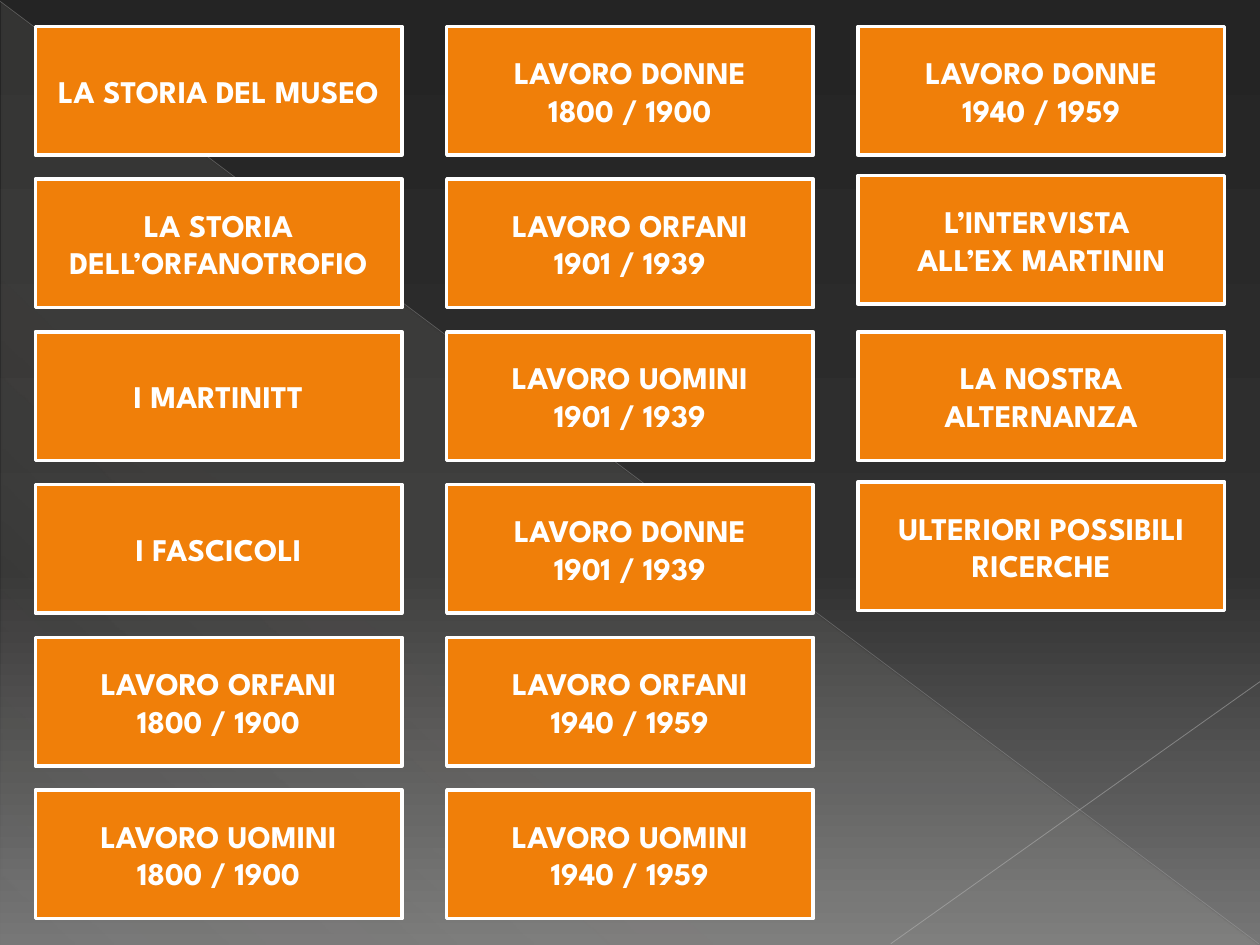
from lxml import etree
from pptx import Presentation
from pptx.dml.color import RGBColor
from pptx.enum.shapes import MSO_CONNECTOR, MSO_SHAPE
from pptx.enum.text import MSO_ANCHOR, PP_ALIGN
from pptx.oxml.ns import qn
from pptx.util import Inches, Pt

RECT, TRIANGLE = MSO_SHAPE.RECTANGLE, MSO_SHAPE.RIGHT_TRIANGLE
STRAIGHT = MSO_CONNECTOR.STRAIGHT
MIDDLE, CENTER = MSO_ANCHOR.MIDDLE, PP_ALIGN.CENTER

# Content: one list per column; \n starts a paragraph, \v breaks a line
COLUMNS = [
    ["LA STORIA DEL MUSEO", "LA STORIA DELL’ORFANOTROFIO", "I MARTINITT",
     "I FASCICOLI", "LAVORO ORFANI\n1800 / 1900", "LAVORO UOMINI\n1800 / 1900"],
    ["LAVORO DONNE\n1800 / 1900", "LAVORO ORFANI\n1901 / 1939",
     "LAVORO UOMINI\n1901 / 1939", "LAVORO DONNE\n1901 / 1939",
     "LAVORO ORFANI\n1940 / 1959", "LAVORO UOMINI\n1940 / 1959"],
    ["LAVORO DONNE\n1940 / 1959", "L’INTERVISTA \vALL’EX MARTININ",
     "LA NOSTRA ALTERNANZA", "ULTERIORI POSSIBILI RICERCHE"],
]
# Vertical offsets of boxes that sit off the grid, by (column, row)
NUDGES = {(2, 1): -0.03, (2, 3): -0.02}

# Grid in inches
LEFT, TOP = 0.28, 0.21
STEP_X, STEP_Y = 3.265, 1.212
BOX_W, BOX_H = 2.91, 1.02

# Backdrop: gradient stops are (position %, colour, opacity %)
BACKGROUND = [(0, "242424", 100), (60, "303030", 100), (100, "767676", 100)]
SHEEN = [(0, "E3DED1", 10), (70, "E3DED1", 8), (100, "E3DED1", 1)]
# Lines: start, end, colour, width, opacity %
LINES = [((0, 0.01), (9.99, 7.49), "B6B6B6", 0.39, 35),
         ((10, 5.41), (7.07, 7.49), "BFBFBF", 0.47, 45)]

ORANGE, WHITE = "F07F09", "FFFFFF"
FONT = {"name": "League Spartan", "size": Pt(18), "bold": True}


def rgb(value):
    return RGBColor.from_string(value)


def add_alpha(color, opacity):
    etree.SubElement(color, qn("a:alpha")).set("val", str(opacity * 1000))


def set_gradient(fill, element, stops, angle):
    fill.gradient()
    grad = next(element.iter(qn("a:gradFill")))
    for child in list(grad):
        grad.remove(child)
    gs_list = etree.SubElement(grad, qn("a:gsLst"))
    for pos, value, opacity in stops:
        gs = etree.SubElement(gs_list, qn("a:gs"), pos=str(pos * 1000))
        color = etree.SubElement(gs, qn("a:srgbClr"), val=value)
        add_alpha(color, opacity)
    etree.SubElement(grad, qn("a:lin"), ang=str(angle * 60000), scaled="0")


def add_line(slide, start, end, color, width, opacity):
    line = slide.shapes.add_connector(STRAIGHT, *map(Inches, start + end))
    line.line.color.rgb = rgb(color)
    line.line.width = Pt(width)
    add_alpha(next(line.element.spPr.iter(qn("a:srgbClr"))), opacity)
    etree.SubElement(line.element.spPr, qn("a:effectLst"))


def add_box(slide, x, y, text):
    sp = slide.shapes.add_shape(RECT, *map(Inches, (x, y, BOX_W, BOX_H)))
    sp.shadow.inherit = False
    sp.fill.solid()
    sp.fill.fore_color.rgb = rgb(ORANGE)
    sp.line.color.rgb = rgb(WHITE)
    sp.line.width = Pt(2)
    tf = sp.text_frame
    tf.word_wrap = True
    tf.vertical_anchor = MIDDLE
    tf.text = text
    for p in tf.paragraphs:
        p.alignment = CENTER
        for r in p.runs:
            for name, value in FONT.items():
                setattr(r.font, name, value)
            r.font.color.rgb = rgb(WHITE)


def main():
    prs = Presentation()
    prs.slide_width, prs.slide_height = Inches(10), Inches(7.5)
    slide = prs.slides.add_slide(prs.slide_layouts[6])

    # Backdrop
    set_gradient(slide.background.fill, slide.element, BACKGROUND, 90)
    sheen = slide.shapes.add_shape(
        TRIANGLE, *map(Inches, (0.01, 0.02, 9.98, 7.48)))
    sheen.shadow.inherit = False
    sheen.line.fill.background()
    set_gradient(sheen.fill, sheen.element, SHEEN, 133)
    for line in LINES:
        add_line(slide, *line)

    # Topic boxes
    for col, topics in enumerate(COLUMNS):
        for row, text in enumerate(topics):
            y = TOP + row * STEP_Y + NUDGES.get((col, row), 0)
            add_box(slide, LEFT + col * STEP_X, y, text)

    prs.save("out.pptx")


if __name__ == "__main__":
    main()
